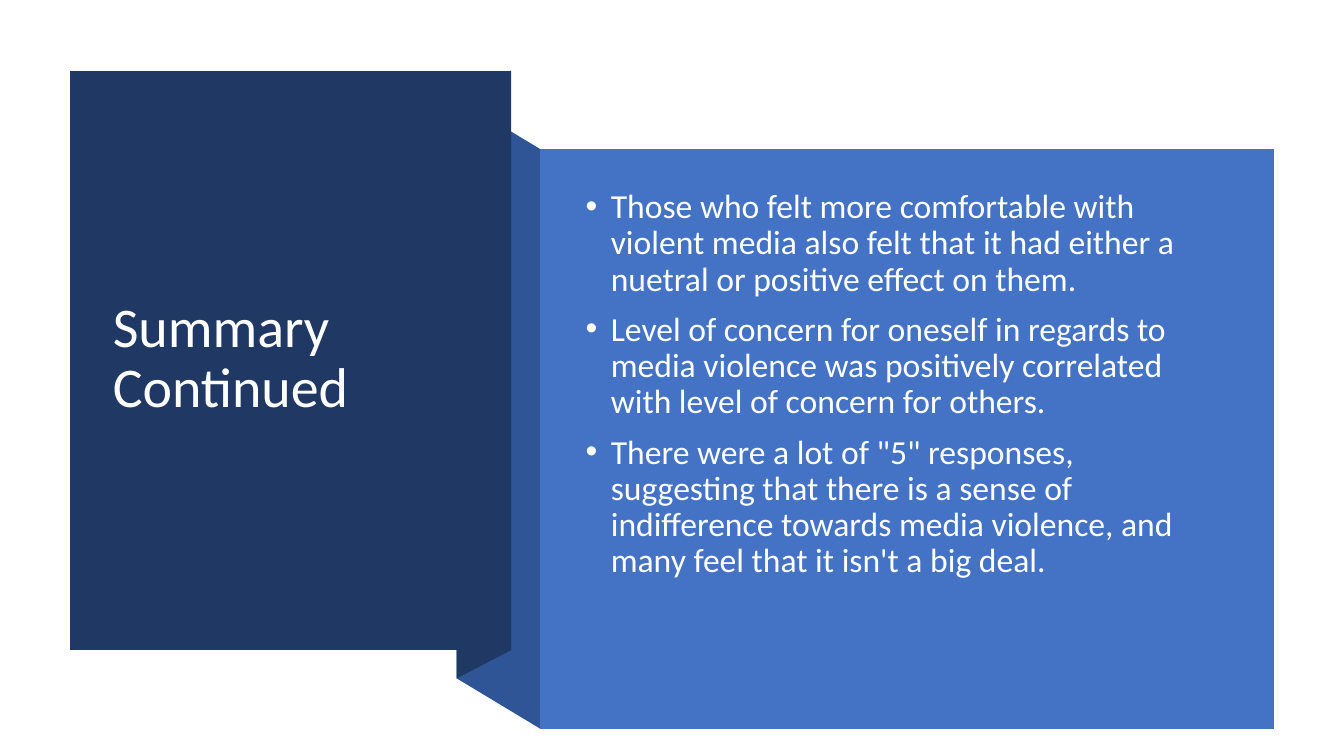
from dataclasses import dataclass

from lxml.etree import SubElement
from pptx import Presentation
from pptx.dml.color import RGBColor
from pptx.enum.text import MSO_ANCHOR
from pptx.oxml.ns import qn
from pptx.util import Inches, Pt

TITLE = "Summary Continued"
POINTS = [
    "Those who felt more comfortable with violent media also felt that it had "
    "either a nuetral or positive effect on them.",
    "Level of concern for oneself in regards to media violence was positively "
    "correlated with level of concern for others.",
    'There were a lot of "5" responses, suggesting that there is a sense of '
    "indifference towards media violence, and many feel that it isn't a big deal.",
]


@dataclass(frozen=True)
class Theme:
    navy: str = "203864"
    fold: str = "2F5597"
    panel: str = "4472C4"
    title_ink: str = "FFFFFF"
    body_ink: str = "FEFFFF"
    font: str = "Calibri"
    title_size: int = 40
    body_size: int = 24


THEME = Theme()
WIDTH, HEIGHT = 13.33, 7.5

# Vertical edges of the folded ribbon, left to right
CARD_LEFT, FOLD_LEFT, CARD_RIGHT, PANEL_LEFT, PANEL_RIGHT = 0.69, 4.53, 5.07, 5.36, 12.64
CARD_TOP, PANEL_TOP, SIDE_HEIGHT = 0.7, 1.48, 5.75
FOLD_TOP = 0.98


def add_band(slide, left, right, left_top, right_top, color):
    """Draw a four-sided band with upright sides of equal height."""
    corners = [(left, left_top), (right, right_top),
               (right, right_top + SIDE_HEIGHT), (left, left_top + SIDE_HEIGHT)]
    points = [(Inches(x), Inches(y)) for x, y in corners]
    builder = slide.shapes.build_freeform(*points[0])
    builder.add_line_segments(points[1:], close=True)
    sp = builder.convert_to_shape()
    sp.shadow.inherit = False
    sp.fill.solid()
    sp.fill.fore_color.rgb = RGBColor.from_string(color)
    sp.line.fill.background()


def set_bullet(p, indent):
    pPr = p._p.get_or_add_pPr()
    pPr.set("marL", str(indent))
    pPr.set("indent", str(-indent))
    SubElement(pPr, qn("a:buFont")).set("typeface", "Arial")
    SubElement(pPr, qn("a:buChar")).set("char", "•")


def add_text(slide, box, texts, *, size, color, anchor, top_inset=0.05,
             gap=0, bullets=False):
    tf = slide.shapes.add_textbox(*map(Inches, box)).text_frame
    tf.word_wrap = True
    tf.vertical_anchor = anchor
    tf.margin_top = Inches(top_inset)
    for i, text in enumerate(texts):
        p = tf.add_paragraph() if i else tf.paragraphs[0]
        p.line_spacing = 0.9
        p.space_before = Pt(gap if i else 0)
        if bullets:
            set_bullet(p, Inches(0.25))
        r = p.add_run()
        r.text = text
        r.font.name = THEME.font
        r.font.size = Pt(size)
        r.font.color.rgb = RGBColor.from_string(color)


def main():
    prs = Presentation()
    prs.slide_width, prs.slide_height = Inches(WIDTH), Inches(HEIGHT)
    slide = prs.slides.add_slide(prs.slide_layouts[6])

    add_band(slide, FOLD_LEFT, PANEL_LEFT, FOLD_TOP, PANEL_TOP, THEME.fold)
    add_band(slide, FOLD_LEFT, CARD_RIGHT, FOLD_TOP, CARD_TOP, THEME.navy)
    add_band(slide, CARD_LEFT, CARD_RIGHT, CARD_TOP, CARD_TOP, THEME.navy)
    add_band(slide, PANEL_LEFT, PANEL_RIGHT, PANEL_TOP, PANEL_TOP, THEME.panel)

    add_text(slide, (1.02, 1.07, 3.71, 4.99), [TITLE], size=THEME.title_size,
             color=THEME.title_ink, anchor=MSO_ANCHOR.MIDDLE)
    add_text(slide, (5.71, 1.88, 6.51, 4.74), POINTS, size=THEME.body_size,
             color=THEME.body_ink, anchor=MSO_ANCHOR.TOP, top_inset=0,
             gap=10, bullets=True)
    prs.save("out.pptx")


if __name__ == "__main__":
    main()
